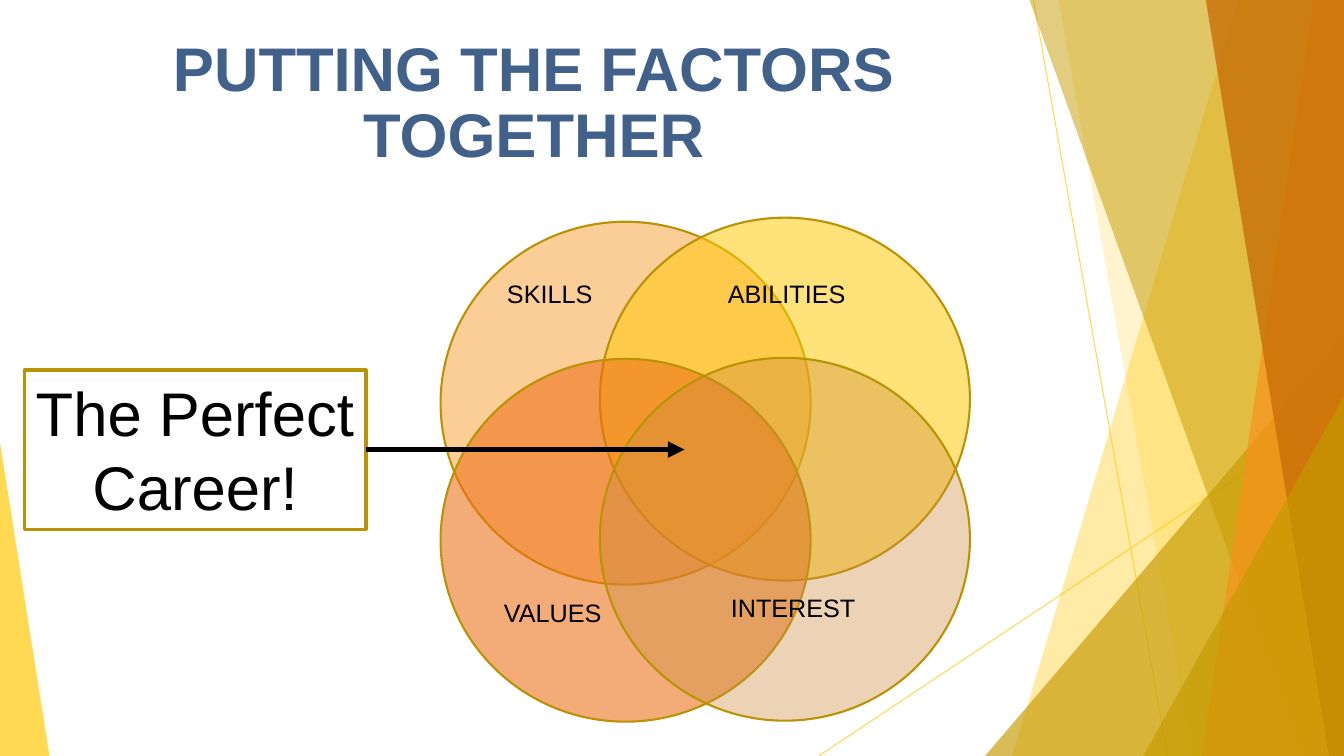
from dataclasses import dataclass

from lxml import etree
from pptx import Presentation
from pptx.dml.color import RGBColor
from pptx.enum.shapes import MSO_CONNECTOR, MSO_SHAPE
from pptx.enum.text import MSO_ANCHOR, MSO_AUTO_SIZE, PP_ALIGN
from pptx.oxml.ns import qn
from pptx.util import Inches, Pt

STRAIGHT = MSO_CONNECTOR.STRAIGHT
OVAL = MSO_SHAPE.OVAL
RECT = MSO_SHAPE.RECTANGLE
WEDGE = MSO_SHAPE.ISOSCELES_TRIANGLE
LEFT = PP_ALIGN.LEFT
CENTER = PP_ALIGN.CENTER
TOP = MSO_ANCHOR.TOP
MIDDLE = MSO_ANCHOR.MIDDLE
GROW = MSO_AUTO_SIZE.SHAPE_TO_FIT_TEXT
FIXED = MSO_AUTO_SIZE.NONE

WIDE, HIGH = 13.33, 7.5


@dataclass(frozen=True)
class Theme:
    font: str = "Arial"
    title: str = "41608A"
    ink: str = "000000"
    edge: str = "BA9305"
    yellow: str = "FFCA08"
    olive: str = "C59A00"
    orange: str = "F8931D"
    rust: str = "C96F06"
    coral: str = "EC7016"
    tan: str = "CE8D3E"
    large: int = 44
    small: int = 18


def apply(target, values):
    for name, value in values.items():
        setattr(target, name, value)


class Board:
    def __init__(self, slide, theme):
        self.slide = slide
        self.theme = theme
        self.layer = slide.shapes

    def group(self):
        self.layer = self.slide.shapes.add_group_shape().shapes

    def ungroup(self):
        self.layer = self.slide.shapes

    def fade(self, shape, alpha):
        color = shape.element.spPr.find(".//" + qn("a:srgbClr"))
        etree.SubElement(color, qn("a:alpha"), val=str(alpha * 1000))

    def paint(self, shape, color=None, alpha=100, edge=0):
        shape.shadow.inherit = False
        if color:
            shape.fill.solid()
            shape.fill.fore_color.rgb = RGBColor.from_string(color)
            self.fade(shape, alpha)
        else:
            shape.fill.background()
        if edge:
            shape.line.color.rgb = RGBColor.from_string(self.theme.edge)
            shape.line.width = Pt(edge)
        else:
            shape.line.fill.background()

    def shape(self, kind, place, **look):
        item = self.layer.add_shape(kind, *map(Inches, place))
        self.paint(item, **look)
        return item

    def wedge(self, place, lean, color, alpha):
        item = self.shape(WEDGE, place, color=color, alpha=alpha)
        item.adjustments[0] = lean

    def shard(self, top, base, color, alpha):
        points = [(WIDE, 0), (WIDE, HIGH), (base, HIGH)]
        pen = self.layer.build_freeform(Inches(top), 0)
        pen.add_line_segments([(Inches(x), Inches(y)) for x, y in points])
        self.paint(pen.convert_to_shape(), color, alpha)

    def line(self, start, end, color, width, alpha=100, arrow=False):
        ends = map(Inches, (*start, *end))
        item = self.layer.add_connector(STRAIGHT, *ends)
        item.line.color.rgb = RGBColor.from_string(color)
        item.line.width = Pt(width)
        if alpha < 100:
            self.fade(item, alpha)
        if arrow:
            stroke = item.element.spPr.find(qn("a:ln"))
            etree.SubElement(stroke, qn("a:tailEnd"), type="triangle")
        etree.SubElement(item.element.spPr, qn("a:effectLst"))

    def letter(self, shape, lines, size, color, align=LEFT, anchor=TOP,
               fit=GROW, bold=False, space=1.0):
        frame = shape.text_frame
        apply(frame, {"word_wrap": True, "auto_size": fit, "vertical_anchor": anchor})
        frame.text = "\n".join(lines)
        for para in frame.paragraphs:
            apply(para, {"alignment": align, "line_spacing": space})
            font = para.runs[0].font
            apply(font, {"name": self.theme.font, "size": Pt(size), "bold": bold})
            font.color.rgb = RGBColor.from_string(color)

    def text(self, place, words, size, color, **style):
        box = self.layer.add_textbox(*map(Inches, place))
        self.letter(box, [words], size, color, **style)


def main():
    deck = Presentation()
    apply(deck, {"slide_width": Inches(WIDE), "slide_height": Inches(HIGH)})
    theme = Theme()
    board = Board(deck.slides.add_slide(deck.slide_layouts[6]), theme)

    board.group()
    for start, end in [((10.25, 0), (11.58, HIGH)), ((WIDE, 4.03), (8.12, HIGH))]:
        board.line(start, end, theme.yellow, 0.75, alpha=70)
    board.shard(12.28, 10.04, theme.yellow, 36)
    board.shard(10.5, 11.83, theme.yellow, 20)
    board.wedge((9.77, 3.33, 3.56, 4.17), 1, theme.olive, 66)
    board.shard(10.21, 12.91, theme.olive, 50)
    board.shard(13.03, 11.92, theme.orange, 70)
    board.shard(11.96, 13.18, theme.rust, 80)
    board.wedge((11.34, 3.93, 1.99, 3.57), 1, theme.olive, 66)
    board.wedge((0, 4.39, 0.49, 3.11), 0, theme.yellow, 70)
    board.ungroup()

    board.text((0.17, 0.31, 10.25, 1.45), "PUTTING THE FACTORS TOGETHER",
               theme.large, theme.title, align=CENTER, anchor=MIDDLE,
               fit=FIXED, bold=True, space=0.9)
    career = board.shape(RECT, (0.24, 3.67, 3.39, 1.58), edge=2.25)
    board.letter(career, ["The Perfect", "Career!"], theme.large, theme.ink, align=CENTER)

    factors = [
        ("SKILLS", 4.37, 2.2, theme.orange, 46, (4.93, 2.71, 1.69)),
        ("ABILITIES", 5.95, 2.16, theme.yellow, 54, (7.12, 2.71, 2.21)),
        ("VALUES", 4.37, 3.56, theme.coral, 58, (4.9, 5.88, 1.89)),
        ("INTEREST", 5.95, 3.55, theme.tan, 38, (7.15, 5.83, 2.32)),
    ]
    board.group()
    for name, left, top, color, alpha, label in factors:
        board.shape(OVAL, (left, top, 3.67, 3.6), color=color, alpha=alpha, edge=1.5)
        board.text((*label, 0.63), name, theme.small, theme.ink)
    board.ungroup()

    board.line((3.63, 4.46), (6.79, 4.46), theme.ink, 4, arrow=True)
    deck.save("out.pptx")


if __name__ == "__main__":
    main()
